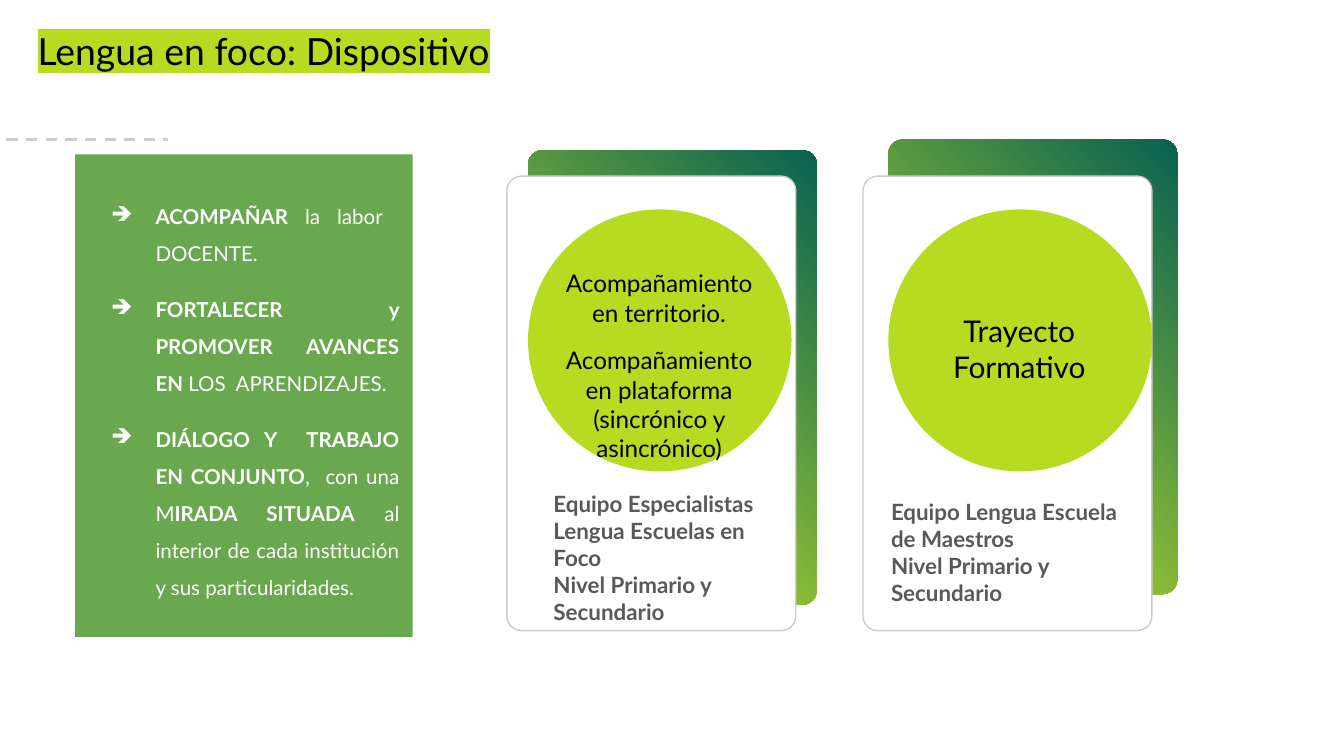
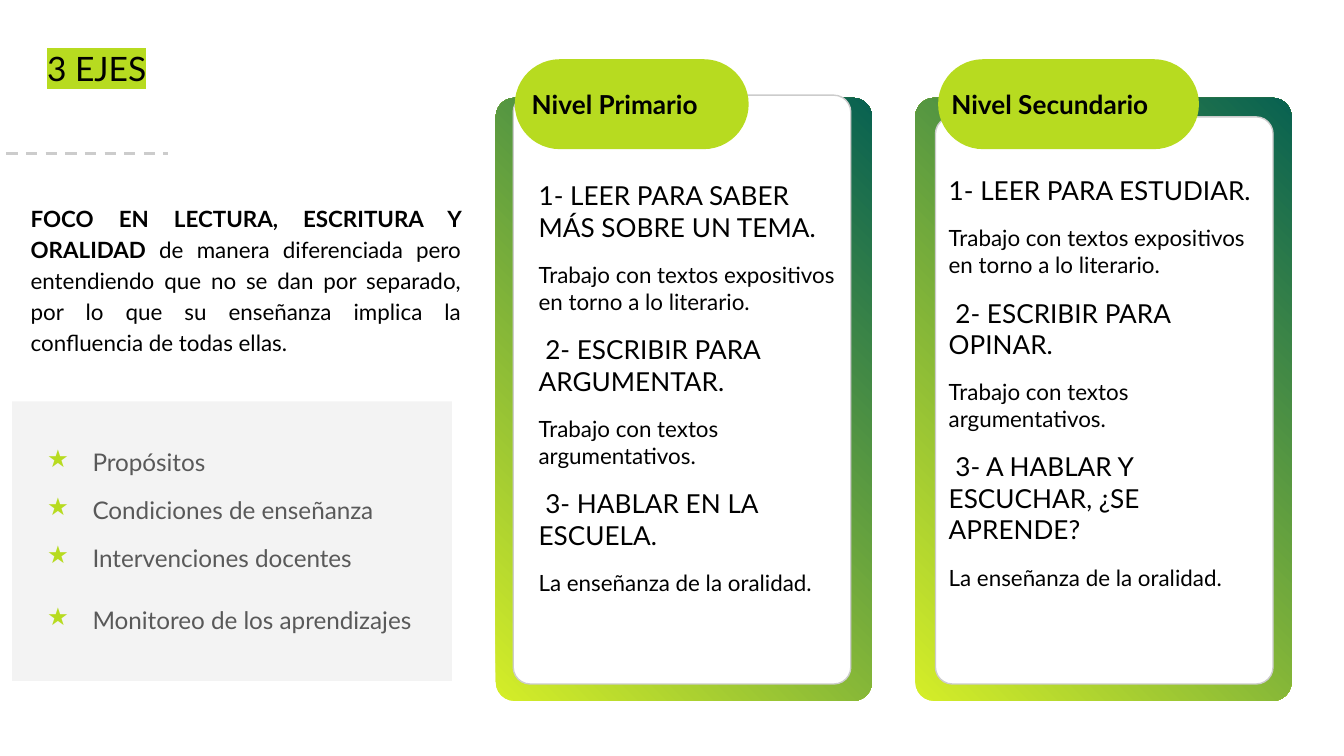
from dataclasses import dataclass, replace
from typing import Optional

from lxml import etree
from pptx import Presentation
from pptx.dml.color import RGBColor
from pptx.enum.dml import MSO_LINE
from pptx.enum.shapes import MSO_CONNECTOR, MSO_SHAPE
from pptx.enum.text import MSO_ANCHOR, MSO_AUTO_SIZE, PP_ALIGN
from pptx.oxml.ns import qn
from pptx.util import Cm, Pt

RECTANGLE, ROUNDED = MSO_SHAPE.RECTANGLE, MSO_SHAPE.ROUNDED_RECTANGLE
STRAIGHT, DASH = MSO_CONNECTOR.STRAIGHT, MSO_LINE.DASH
LEFT, CENTER, JUSTIFY = PP_ALIGN.LEFT, PP_ALIGN.CENTER, PP_ALIGN.JUSTIFY
TOP, MIDDLE = MSO_ANCHOR.TOP, MSO_ANCHOR.MIDDLE
GROW, FIXED = MSO_AUTO_SIZE.SHAPE_TO_FIT_TEXT, MSO_AUTO_SIZE.NONE

FONT = "Lato"
LIME, GREEN, PALE = "B7DB20", "6AA84F", "F3F3F3"
BLACK, WHITE, GREY, RULE = "000000", "FFFFFF", "595959", "CCCCCC"
GRADIENT = ("D5EE28", "086151")
CORNER, PILL = 0.05, 0.5
INSET = 0.25
GAP = 10


@dataclass(frozen=True)
class Box:
    """Position and size in centimetres."""
    left: float
    top: float
    width: float
    height: float


@dataclass(frozen=True)
class Span:
    """A stretch of text in one weight."""
    text: str
    bold: bool = False


@dataclass(frozen=True)
class Bullet:
    """A bullet sign with its colour and hanging indent."""
    sign: str
    color: str
    hang: float


@dataclass(frozen=True)
class Para:
    """A paragraph with its type size, colour and spacing."""
    spans: tuple[Span, ...]
    size: int
    color: str = BLACK
    align: PP_ALIGN = LEFT
    spacing: float = 1.0
    before: int = 0
    after: int = 0
    bullet: Optional[Bullet] = None
    highlight: Optional[str] = None


@dataclass(frozen=True)
class TextBlock:
    """Paragraphs and the box that holds them."""
    box: Box
    paras: list[Para]
    grow: bool = True


@dataclass(frozen=True)
class Card:
    """A white card on a gradient panel, with a lime badge."""
    panel: Box
    face: Box
    badge: Box
    label: TextBlock
    body: TextBlock


def rgb(color: str) -> RGBColor:
    """Turn a hex string into a colour."""
    return RGBColor.from_string(color)


def plain(text: str, size: int, bold: bool = False, **style) -> Para:
    """Make a paragraph of a single span."""
    return Para((Span(text, bold),), size, **style)


def stacked(paras: list[Para]) -> list[Para]:
    """Put the standard gap between paragraphs and after the last."""
    last = len(paras) - 1
    return [replace(para, before=GAP if index else 0, after=GAP if index == last else 0)
            for index, para in enumerate(paras)]


def axes(*pairs: tuple[str, str]) -> list[Para]:
    """Alternate large headings and smaller explanations."""
    return stacked([plain(text, size) for pair in pairs for text, size in zip(pair, (14, 12))])


def color_element(tag: str, color: str):
    """Make an XML element that wraps a colour."""
    element = etree.Element(qn(tag))
    etree.SubElement(element, qn("a:srgbClr"), val=color)
    return element


def add_bullet(paragraph, bullet: Bullet) -> None:
    """Give a paragraph a bullet and a hanging indent."""
    properties = paragraph._p.get_or_add_pPr()
    properties.set("marL", str(Cm(1.27)))
    properties.set("indent", str(-Cm(bullet.hang)))
    properties.append(color_element("a:buClr", bullet.color))
    etree.SubElement(properties, qn("a:buChar"), char=bullet.sign)


def format_run(run, span: Span, para: Para) -> None:
    """Apply font, colour and highlight to a run."""
    font = run.font
    font.name, font.size, font.bold = FONT, Pt(para.size), span.bold
    font.color.rgb = rgb(para.color)
    if para.highlight:
        fill = run._r.rPr.find(qn("a:solidFill"))
        fill.addnext(color_element("a:highlight", para.highlight))


def write(frame, paras: list[Para], anchor: MSO_ANCHOR = TOP, grow: bool = False) -> None:
    """Fill a text frame with paragraphs."""
    frame.word_wrap = True
    frame.auto_size = GROW if grow else FIXED
    frame.vertical_anchor = anchor
    frame.margin_left = frame.margin_right = Cm(INSET)
    frame.margin_top = frame.margin_bottom = Cm(INSET)
    frame.text = "\n".join(para.spans[0].text for para in paras)
    for paragraph, para in zip(frame.paragraphs, paras):
        paragraph.alignment = para.align
        paragraph.line_spacing = para.spacing
        paragraph.space_before, paragraph.space_after = Pt(para.before), Pt(para.after)
        if para.bullet:
            add_bullet(paragraph, para.bullet)
        for span in para.spans[1:]:
            paragraph.add_run().text = span.text
        for run, span in zip(paragraph.runs, para.spans):
            format_run(run, span, para)


def place(box: Box) -> tuple[Cm, Cm, Cm, Cm]:
    """Turn a box into lengths."""
    return Cm(box.left), Cm(box.top), Cm(box.width), Cm(box.height)


def add_text(page, block: TextBlock) -> None:
    """Add a text box."""
    write(page.shapes.add_textbox(*place(block.box)).text_frame, block.paras, grow=block.grow)


def add_block(page, box: Box, color: Optional[str] = None, corner: Optional[float] = None,
              outline: Optional[str] = None):
    """Add a square or rounded rectangle; without a colour it takes the gradient."""
    shape = page.shapes.add_shape(RECTANGLE if corner is None else ROUNDED, *place(box))
    shape.shadow.inherit = False
    if corner is not None:
        shape.adjustments[0] = corner
    if color:
        shape.fill.solid()
        shape.fill.fore_color.rgb = rgb(color)
    else:
        shape.fill.gradient()
        shape.fill.gradient_angle = 45
        for stop, stop_color in zip(shape.fill.gradient_stops, GRADIENT):
            stop.color.rgb = rgb(stop_color)
    if outline:
        shape.line.color.rgb = rgb(outline)
        shape.line.width = Pt(0.75)
    else:
        shape.line.fill.background()
    return shape


def add_card(page, card: Card) -> None:
    """Draw a card with its panel, badge and texts."""
    add_block(page, card.panel, corner=CORNER)
    add_block(page, card.face, WHITE, CORNER, RULE)
    add_block(page, card.badge, LIME, PILL)
    add_text(page, card.label)
    add_text(page, card.body)


def add_page(deck, title: str, size: int, box: Box, rule_top: float):
    """Add a page with a highlighted title and a dashed rule."""
    page = deck.slides.add_slide(deck.slide_layouts[6])
    add_text(page, TextBlock(box, [plain(title, size, highlight=LIME)], grow=False))
    rule = page.shapes.add_connector(STRAIGHT, Cm(-0.25), Cm(rule_top), Cm(3.18), Cm(rule_top))
    rule.line.color.rgb = rgb(RULE)
    rule.line.width = Pt(1.5)
    rule.line.dash_style = DASH
    etree.SubElement(rule._element.spPr, qn("a:effectLst"))
    return page


def team(name: str) -> list[Para]:
    """Name a team and the levels it serves."""
    return [plain(text, 12, True, color=GREY) for text in (name, "Nivel Primario y Secundario")]


def build_device(deck) -> None:
    """Build the page on how the programme works."""
    page = add_page(deck, "Lengua en foco: Dispositivo", 20, Box(0.46, 0.28, 17.7, 2.08), 2.64)
    support = [plain(text, 13, align=CENTER) for text in (
        "Acompañamiento en territorio.",
        "Acompañamiento en plataforma (sincrónico y asincrónico)")]
    training = [plain("Trayecto Formativo", 16, align=CENTER)]
    cards = (
        Card(Box(9.98, 2.84, 5.46, 8.59), Box(9.58, 3.33, 5.46, 8.59), Box(9.98, 3.96, 4.98, 4.95),
             TextBlock(Box(10.31, 4.83, 4.29, 4.22), stacked(support)),
             TextBlock(Box(10.21, 9.02, 4.98, 2.72),
                       team("Equipo Especialistas Lengua Escuelas en Foco"), False)),
        Card(Box(16.79, 2.64, 5.46, 8.59), Box(16.31, 3.33, 5.46, 8.59), Box(16.79, 3.96, 4.98, 4.95),
             TextBlock(Box(17.12, 5.66, 4.29, 1.88), training),
             TextBlock(Box(16.59, 9.17, 4.93, 2.39),
                       team("Equipo Lengua Escuela de Maestros"), False)),
    )
    for card in cards:
        add_card(page, card)
    goals = (
        (Span("ACOMPAÑAR ", True), Span("la labor  DOCENTE.")),
        (Span("FORTALECER y PROMOVER AVANCES EN ", True), Span("LOS  APRENDIZAJES.")),
        (Span("DIÁLOGO Y  TRABAJO EN CONJUNTO", True), Span(",  con una M"),
         Span("IRADA SITUADA", True),
         Span(" al interior de cada institución y sus particularidades.")),
    )
    arrow = Bullet("➔", WHITE, 0.84)
    panel = add_block(page, Box(1.42, 2.92, 6.38, 9.12), GREEN)
    write(panel.text_frame, stacked([Para(spans, 11, WHITE, JUSTIFY, 1.5, bullet=arrow)
                                     for spans in goals]), MIDDLE)


def build_axes(deck) -> None:
    """Build the page on the three axes of each level."""
    page = add_page(deck, "3 EJES", 18, Box(0.64, 0.66, 5.18, 1.88), 2.9)
    star = Bullet("★", LIME, 0.86)
    topics = [plain(text, 13, color=GREY, bullet=star) for text in (
        "Propósitos", "Condiciones de enseñanza", "Intervenciones docentes",
        "Monitoreo de los aprendizajes")]
    topics[-1] = replace(topics[-1], align=JUSTIFY, spacing=1.5)
    panel = add_block(page, Box(0.23, 7.59, 8.31, 5.28), PALE)
    write(panel.text_frame, stacked(topics), MIDDLE)
    focus = (Span("FOCO EN LECTURA, ESCRITURA Y ORALIDAD ", True),
             Span("de manera diferenciada pero entendiendo que no se dan por separado, "
                  "por lo que su enseñanza implica la confluencia de todas ellas."))
    add_text(page, TextBlock(Box(0.33, 3.56, 8.64, 3.38),
                             [Para(focus, 12, align=JUSTIFY, spacing=1.15, before=11)]))
    literary = "Trabajo con textos expositivos en torno a lo literario."
    arguing = "Trabajo con textos argumentativos."
    speaking = "La enseñanza de la oralidad."
    cards = (
        Card(Box(9.37, 1.85, 7.11, 11.4), Box(9.7, 1.8, 6.38, 11.13), Box(9.73, 1.12, 4.42, 1.7),
             TextBlock(Box(9.8, 1.42, 4.29, 1.12), [plain("Nivel Primario", 14, True)]),
             TextBlock(Box(9.93, 3.15, 6.38, 8.46), axes(
                 ("1- LEER PARA SABER MÁS SOBRE UN TEMA.", literary),
                 (" 2- ESCRIBIR PARA ARGUMENTAR.", arguing),
                 (" 3- HABLAR EN LA ESCUELA.", speaking)))),
        Card(Box(17.3, 1.85, 7.11, 11.4), Box(17.68, 2.21, 6.38, 10.72), Box(17.73, 1.12, 4.93, 1.7),
             TextBlock(Box(17.73, 1.42, 4.93, 1.12), [plain("Nivel Secundario", 14, True)]),
             TextBlock(Box(17.68, 3.05, 6.38, 9.04), axes(
                 ("1- LEER PARA ESTUDIAR.", literary),
                 (" 2- ESCRIBIR PARA OPINAR.", arguing),
                 (" 3- A HABLAR Y ESCUCHAR, ¿SE APRENDE?", speaking)))),
    )
    for card in cards:
        add_card(page, card)


def main() -> None:
    """Build the deck and save it."""
    deck = Presentation()
    deck.slide_width, deck.slide_height = Cm(25.4), Cm(14.29)
    build_device(deck)
    build_axes(deck)
    deck.save("out.pptx")


if __name__ == "__main__":
    main()
